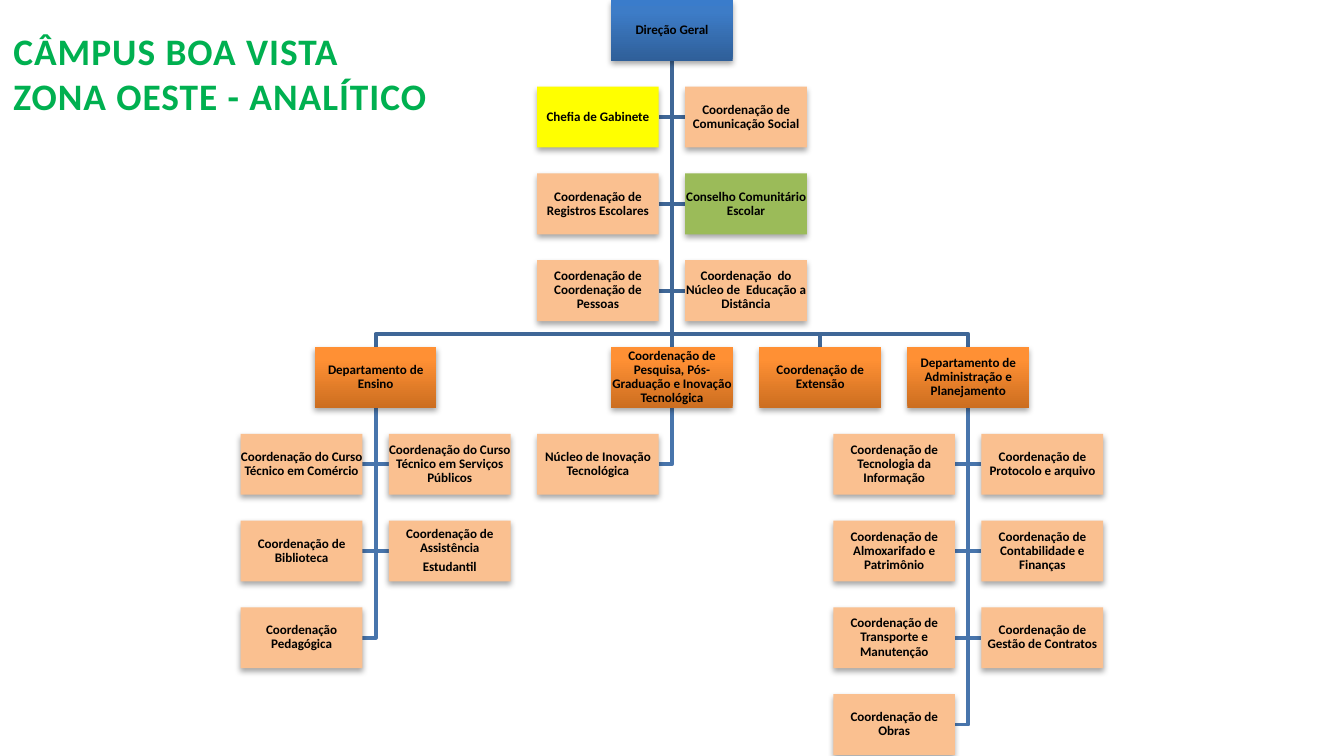
from copy import deepcopy

from pptx import Presentation
from pptx.dml.color import RGBColor
from pptx.enum.shapes import MSO_CONNECTOR, MSO_SHAPE
from pptx.enum.text import MSO_ANCHOR, MSO_AUTO_SIZE, PP_ALIGN
from pptx.oxml import parse_xml
from pptx.oxml.ns import nsdecls, qn
from pptx.util import Cm, Pt

RECTANGLE = MSO_SHAPE.RECTANGLE
STRAIGHT = MSO_CONNECTOR.STRAIGHT
CENTER, LEFT = PP_ALIGN.CENTER, PP_ALIGN.LEFT
MIDDLE, TOP = MSO_ANCHOR.MIDDLE, MSO_ANCHOR.TOP
GROW = MSO_AUTO_SIZE.SHAPE_TO_FIT_TEXT

FONT = "Calibri"
TITLE = ["CÂMPUS BOA VISTA", "ZONA OESTE - ANALÍTICO"]
BLUE = [(0, "2F5F99"), (0.8, "3D7CC7"), (1, "3A7CCB")]
ORANGE = [(0, "CC6E20"), (0.8, "FF9034"), (1, "FF9136")]
PEACH, YELLOW, GREEN = "FAC090", "FFFF00", "9BBB59"
ROOT_LINE, DEPARTMENT_LINE = "3F6797", "4875AC"

ROOT = "Direção Geral"
ROOT_MEMBERS = [
    "Chefia de Gabinete",
    "Coordenação de Comunicação Social",
    "Coordenação de Registros Escolares",
    "Conselho Comunitário Escolar",
    "Coordenação de Coordenação de Pessoas",
    "Coordenação  do Núcleo de  Educação a Distância",
]
SPECIAL_FILLS = {"Chefia de Gabinete": YELLOW, "Conselho Comunitário Escolar": GREEN}
DEPARTMENTS = [
    ("Departamento de Ensino", -4, [
        "Coordenação do Curso Técnico em Comércio",
        "Coordenação do Curso Técnico em Serviços Públicos",
        "Coordenação de Biblioteca",
        "Coordenação de Assistência\nEstudantil",
        "Coordenação Pedagógica",
    ]),
    ("Coordenação de Pesquisa, Pós-Graduação e Inovação Tecnológica", 0, [
        "Núcleo de Inovação Tecnológica",
    ]),
    ("Coordenação de Extensão", 2, []),
    ("Departamento de Administração e Planejamento", 4, [
        "Coordenação de Tecnologia da Informação",
        "Coordenação de Protocolo e arquivo",
        "Coordenação de Almoxarifado e Patrimônio",
        "Coordenação de Contabilidade e Finanças",
        "Coordenação de Transporte e Manutenção",
        "Coordenação de Gestão de Contratos",
        "Coordenação de Obras",
    ]),
]

CENTER_X, COLUMN_STEP, ROW_STEP = Cm(12.7), Cm(1.4), Cm(1.64)
BOX_WIDTH, BOX_HEIGHT = Cm(2.3), Cm(1.15)
BRANCH_GAP = Cm(0.25)
DEPARTMENT_ROW = 4


def rgb(color):
    """Turn a hex string into a colour."""
    return RGBColor.from_string(color)


def write(frame, lines, size, color, alignment):
    """Write one bold paragraph per line and return the paragraphs."""
    for index, line in enumerate(lines):
        paragraph = frame.add_paragraph() if index else frame.paragraphs[0]
        paragraph.alignment = alignment
        run = paragraph.add_run()
        run.text = line
        run.font.name, run.font.size, run.font.bold = FONT, Pt(size), True
        run.font.color.rgb = rgb(color)
    return frame.paragraphs


def add_title(slide):
    """Place the title in its placeholder."""
    title = slide.shapes.title
    title.left, title.top, title.width, title.height = Cm(0), Cm(0.4), Cm(9.88), Cm(1.96)
    frame = title.text_frame
    frame.word_wrap, frame.auto_size, frame.vertical_anchor = True, GROW, TOP
    for paragraph in write(frame, TITLE, 20, "00B050", LEFT):
        paragraph.runs[0].font._element.set("spc", "50")


def paint(shape, fill):
    """Fill a shape with a plain colour or with gradient stops."""
    if isinstance(fill, str):
        shape.fill.solid()
        shape.fill.fore_color.rgb = rgb(fill)
        return
    shape.fill.gradient()
    shape.fill.gradient_angle = 90
    stop_list = shape._element.spPr.find(".//" + qn("a:gsLst"))
    stop_list.append(deepcopy(stop_list[0]))
    for stop, (position, color) in zip(shape.fill.gradient_stops, fill):
        stop.position = position
        stop.color.rgb = rgb(color)


def add_box(slide, text, column, row, fill):
    """Add one unit of the chart at its grid place."""
    left = CENTER_X + column * COLUMN_STEP - BOX_WIDTH // 2
    box = slide.shapes.add_shape(RECTANGLE, left, row * ROW_STEP, BOX_WIDTH, BOX_HEIGHT)
    paint(box, fill)
    box.line.fill.background()
    box._element.spPr.append(parse_xml(
        f'<a:effectLst {nsdecls("a")}><a:outerShdw blurRad="40000" dist="23000" '
        'dir="5400000" rotWithShape="0"><a:srgbClr val="000000">'
        '<a:alpha val="35000"/></a:srgbClr></a:outerShdw></a:effectLst>'))
    frame = box.text_frame
    frame.word_wrap, frame.vertical_anchor = True, MIDDLE
    frame.margin_left = frame.margin_right = frame.margin_top = frame.margin_bottom = 0
    for paragraph in write(frame, text.split("\n"), 7, "000000", CENTER):
        paragraph.line_spacing, paragraph.space_after = 0.9, Pt(2.45)
    return box


def finish_line(slide, line, color):
    """Style a line and put it behind the boxes."""
    line.line.color.rgb = rgb(color)
    line.line.width = Pt(2)
    slide.shapes._spTree.insert(3, line._element)


def add_elbow(slide, points, color):
    """Draw an open bent line through the points."""
    builder = slide.shapes.build_freeform(*points[0])
    builder.add_line_segments(points[1:], close=False)
    elbow = builder.convert_to_shape()
    elbow.fill.background()
    elbow.shadow.inherit = False
    finish_line(slide, elbow, color)


def add_members(slide, parent, column, row, members, color):
    """Hang members left and right in turn below their parent."""
    x, bottom = parent.left + BOX_WIDTH // 2, parent.top + BOX_HEIGHT
    for index, text in enumerate(members):
        side = 1 if index % 2 else -1
        fill = SPECIAL_FILLS.get(text, PEACH)
        box = add_box(slide, text, column + side, row + 1 + index // 2, fill)
        y = box.top + BOX_HEIGHT // 2
        edge = box.left if side == 1 else box.left + BOX_WIDTH
        add_elbow(slide, [(x, bottom), (x, y), (edge, y)], color)


def add_branch(slide, root, department):
    """Link the root to a department."""
    if department.left == root.left:
        link = slide.shapes.add_connector(STRAIGHT, 0, 0, 0, 0)
        link.begin_connect(root, 2)
        link.end_connect(department, 0)
        link._element.spPr.append(parse_xml(f'<a:effectLst {nsdecls("a")}/>'))
        finish_line(slide, link, ROOT_LINE)
        return
    start, end = (shape.left + BOX_WIDTH // 2 for shape in (root, department))
    turn = department.top - BRANCH_GAP
    points = [(start, BOX_HEIGHT), (start, turn), (end, turn), (end, department.top)]
    add_elbow(slide, points, ROOT_LINE)


def main():
    """Build the organisation chart slide."""
    presentation = Presentation()
    presentation.slide_width, presentation.slide_height = Cm(25.4), Cm(14.29)
    slide = presentation.slides.add_slide(presentation.slide_layouts[5])
    add_title(slide)
    root = add_box(slide, ROOT, 0, 0, BLUE)
    for name, column, members in DEPARTMENTS:
        department = add_box(slide, name, column, DEPARTMENT_ROW, ORANGE)
        add_branch(slide, root, department)
        add_members(slide, department, column, DEPARTMENT_ROW, members, DEPARTMENT_LINE)
    add_members(slide, root, 0, 0, ROOT_MEMBERS, ROOT_LINE)
    presentation.save("out.pptx")


if __name__ == "__main__":
    main()
